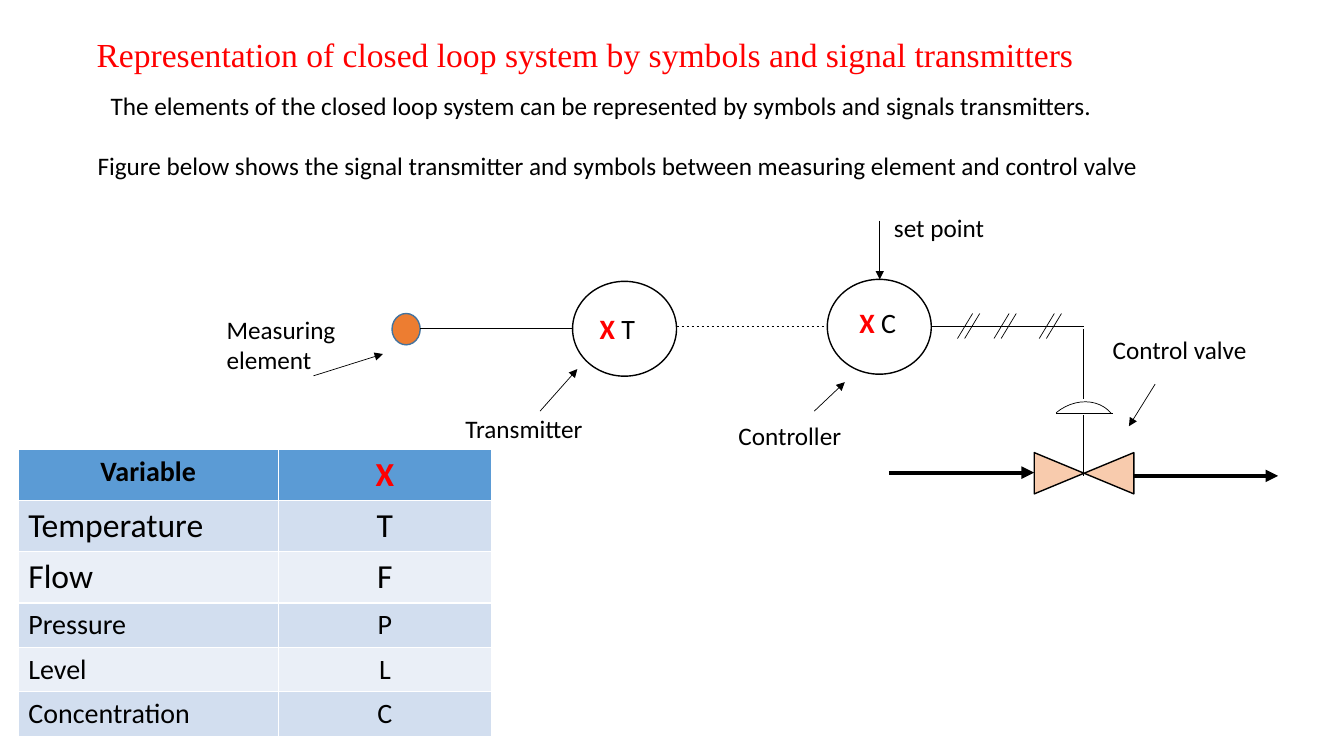
from pptx import Presentation
from pptx.dml.color import RGBColor
from pptx.enum.dml import MSO_LINE
from pptx.enum.shapes import MSO_CONNECTOR, MSO_SHAPE
from pptx.enum.text import MSO_ANCHOR, PP_ALIGN
from pptx.oxml.ns import qn
from pptx.util import Cm, Pt
from lxml import etree

STRAIGHT = MSO_CONNECTOR.STRAIGHT
OVAL = MSO_SHAPE.OVAL
COLORS = {
    "black": "000000", "white": "FFFFFF", "red": "FF0000",
    "sensor": "ED7D31", "sensor_edge": "43739E", "valve": "F8CBAD",
    "header": "5B9BD5", "band_dark": "D2DEEF", "band_light": "EAEFF7",
}


def add_run(paragraph, text, size, color="black", bold=False, font="Calibri"):
    run = paragraph.add_run()
    run.text = text
    run.font.size = Pt(size)
    run.font.name = font
    run.font.bold = bold
    run.font.color.rgb = RGBColor.from_string(COLORS[color])


def add_line(x1, y1, x2, y2, width=0.5, arrow=False):
    line = slide.shapes.add_connector(STRAIGHT, Cm(x1), Cm(y1), Cm(x2), Cm(y2))
    line.line.color.rgb = RGBColor.from_string(COLORS["black"])
    line.line.width = Pt(width)
    if arrow:
        etree.SubElement(line.line._get_or_add_ln(), qn("a:tailEnd"), type="triangle")
    etree.SubElement(line._element.spPr, qn("a:effectLst"))
    return line


prs = Presentation()
prs.slide_width, prs.slide_height = Cm(33.87), Cm(19.05)
slide = prs.slides.add_slide(prs.slide_layouts[5])

# Title
title = slide.shapes.title
title.left, title.top, title.width, title.height = Cm(2.18), Cm(0.66), Cm(25.88), Cm(1.35)
title.text_frame.vertical_anchor = MSO_ANCHOR.TOP
heading = title.text_frame.paragraphs[0]
heading.alignment = PP_ALIGN.LEFT
heading.line_spacing = 1.07
heading.space_after = Pt(8)
add_run(heading, "Representation of closed loop system by symbols and signal transmitters",
        24, "red", font="Times New Roman")

# Table of variables and their letters
variables = [("Variable", "X", 20, 24), ("Temperature", "T", 24, 24), ("Flow", "F", 24, 24),
             ("Pressure", "P", 20, 20), ("Level", "L", 20, 20), ("Concentration", "C", 20, 20)]
table = slide.shapes.add_table(len(variables), 2, Cm(0.46), Cm(11.33), Cm(11.93), Cm(7.11)).table
table.columns[0].width, table.columns[1].width = Cm(6.55), Cm(5.38)
for row, (variable, letter, variable_size, letter_size) in enumerate(variables):
    is_header = row == 0
    table.rows[row].height = Cm(1.27 if letter_size == 24 else 1.1)
    band = "header" if is_header else "band_dark" if row % 2 else "band_light"
    for col, (text, size) in enumerate([(variable, variable_size), (letter, letter_size)]):
        cell = table.cell(row, col)
        cell.fill.solid()
        cell.fill.fore_color.rgb = RGBColor.from_string(COLORS[band])
        paragraph = cell.text_frame.paragraphs[0]
        paragraph.alignment = PP_ALIGN.CENTER if is_header or col else PP_ALIGN.LEFT
        add_run(paragraph, text, size, "red" if is_header and col else "black", is_header)

# Instrument symbols
symbols = [
    (OVAL, 9.88, 7.9, 0.71, 0.79, 0, "sensor", "sensor_edge", 1),
    (OVAL, 14.43, 7.09, 2.62, 2.39, 0, "white", "black", 1),
    (OVAL, 20.85, 7.04, 2.62, 2.39, 0, "white", "black", 1),
    (MSO_SHAPE.FLOWCHART_COLLATE, 26.8, 10.67, 1.04, 2.51, 270, "valve", "black", 1),
    (MSO_SHAPE.ARC, 26.14, 10.19, 2.11, 1.8, 320.2, None, "black", 0.5),
]
for kind, x, y, w, h, rotation, fill, edge, width in symbols:
    symbol = slide.shapes.add_shape(kind, Cm(x), Cm(y), Cm(w), Cm(h))
    symbol.shadow.inherit = False
    symbol.rotation = rotation
    if fill:
        symbol.fill.solid()
        symbol.fill.fore_color.rgb = RGBColor.from_string(COLORS[fill])
    else:
        symbol.fill.background()
    symbol.line.color.rgb = RGBColor.from_string(COLORS[edge])
    symbol.line.width = Pt(width)

# Signal lines, with slashes marking the pneumatic one
add_line(10.59, 8.28, 14.43, 8.28)
electric_signal = add_line(17.05, 8.23, 20.85, 8.23)
electric_signal.line.dash_style = MSO_LINE.DASH
add_line(23.47, 8.23, 27.31, 8.23)
for pair_x in (24.51, 25.43, 26.57):
    for slash_x in (pair_x, pair_x + 0.18):
        add_line(slash_x, 7.9, slash_x - 0.38, 8.53)

# Valve stem and diaphragm
add_line(27.31, 8.28, 27.31, 10.06)
add_line(26.62, 10.41, 28.04, 10.41)
add_line(27.31, 10.46, 27.31, 11.99)

# Process flow, then pointers from the labels
arrows = [
    (22.4, 11.91, 26.06, 11.91, 3),
    (28.55, 11.99, 32.21, 11.99, 3),
    (7.9, 9.47, 9.65, 8.92, 0.5),
    (13.61, 10.36, 14.55, 9.3, 0.5),
    (20.52, 10.36, 21.29, 9.63, 0.5),
    (29.11, 9.68, 28.45, 10.74, 0.5),
    (22.17, 5.56, 22.17, 7.04, 0.5),
]
for x1, y1, x2, y2, width in arrows:
    add_line(x1, y1, x2, y2, width, arrow=True)

# Sentences, labels and instrument letters
texts = [
    (2.54, 2.16, 26.57, 1.02, "The elements of the closed loop system can be represented by "
                              "symbols and signals transmitters."),
    (2.21, 3.66, 28.24, 1.02, "Figure below shows the signal transmitter and symbols between "
                              "measuring element and control valve"),
    (5.46, 7.8, 4.85, 1.8, "Measuring element"),
    (11.48, 10.29, 4.85, 1.02, "Transmitter"),
    (18.36, 10.46, 3.45, 1.02, "Controller"),
    (27.79, 8.31, 4.85, 1.02, "Control valve"),
    (22.28, 5.23, 2.9, 1.02, "set point"),
    (14.86, 7.72, 1.63, 1.12, "X T"),
    (21.41, 7.57, 1.63, 1.12, "X C"),
]
for x, y, w, h, text in texts:
    frame = slide.shapes.add_textbox(Cm(x), Cm(y), Cm(w), Cm(h)).text_frame
    frame.word_wrap = True
    paragraph = frame.paragraphs[0]
    if text.startswith("X"):
        add_run(paragraph, "X", 20, "red", True)
        add_run(paragraph, text[1:], 20)
    else:
        add_run(paragraph, text, 18)

prs.save("out.pptx")
